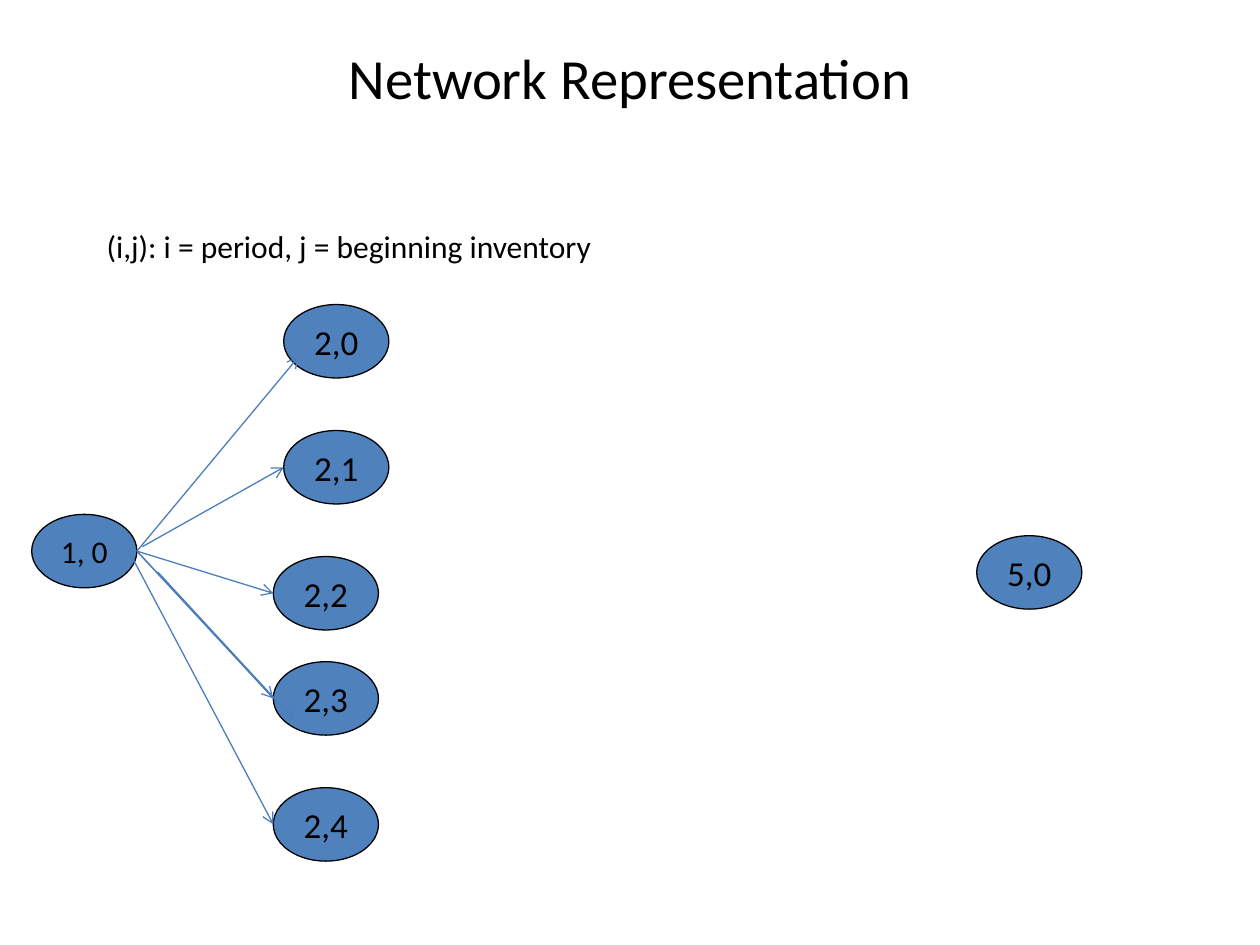
import pptx
import pptx.util
import pptx.dml.color
import pptx.enum.shapes
import pptx.enum.text
import pptx.oxml.ns
import lxml.etree

Cm = pptx.util.Cm
Pt = pptx.util.Pt
RGBColor = pptx.dml.color.RGBColor
qn = pptx.oxml.ns.qn

BLACK = RGBColor(0x00, 0x00, 0x00)
NODE_BLUE = RGBColor(0x4F, 0x81, 0xBD)
ARROW_BLUE = RGBColor(0x4B, 0x7E, 0xBC)
FONT = "Calibri"
NODE_WIDTH, NODE_HEIGHT = 2.12, 1.48

START = ("1, 0", 0, 4.23)
PERIOD_TWO = [
    ("2,0", 5.08, 0),
    ("2,1", 5.08, 2.54),
    ("2,2", 4.87, 5.08),
    ("2,3", 4.87, 7.2),
    ("2,4", 4.87, 9.74),
]
END = ("5,0", 19.05, 4.66)


def write_text(paragraph, text, size):
    paragraph.text = text
    paragraph.font.name = FONT
    paragraph.font.size = Pt(size)
    paragraph.font.color.rgb = BLACK


def add_title(slide, left, top, width, height):
    title = slide.shapes.add_textbox(Cm(left), Cm(top), Cm(width), Cm(height))
    frame = title.text_frame
    frame.word_wrap = True
    frame.vertical_anchor = pptx.enum.text.MSO_ANCHOR.MIDDLE
    write_text(frame.paragraphs[0], "Network Representation", 32.4)
    frame.paragraphs[0].alignment = pptx.enum.text.PP_ALIGN.CENTER


def add_legend(slide, left, top, width, height):
    legend = slide.shapes.add_textbox(Cm(left), Cm(top), Cm(width), Cm(height))
    frame = legend.text_frame
    frame.word_wrap = False
    frame.auto_size = pptx.enum.text.MSO_AUTO_SIZE.SHAPE_TO_FIT_TEXT
    write_text(frame.paragraphs[0], "(i,j): i = period, j = beginning inventory", 18)


def add_node(slide, label, left, top, size=20, space_before=4):
    node = slide.shapes.add_shape(
        pptx.enum.shapes.MSO_SHAPE.OVAL,
        Cm(left), Cm(top), Cm(NODE_WIDTH), Cm(NODE_HEIGHT))
    node.shadow.inherit = False
    node.fill.solid()
    node.fill.fore_color.rgb = NODE_BLUE
    node.line.color.rgb = BLACK
    node.line.width = Pt(0.75)
    frame = node.text_frame
    frame.word_wrap = False
    frame.vertical_anchor = pptx.enum.text.MSO_ANCHOR.MIDDLE
    state = frame.paragraphs[0]
    write_text(state, label, size)
    state.alignment = pptx.enum.text.PP_ALIGN.CENTER
    state.space_before = Pt(space_before)


def add_arrow(slide, x1, y1, x2, y2):
    arrow = slide.shapes.add_connector(
        pptx.enum.shapes.MSO_CONNECTOR.STRAIGHT, Cm(x1), Cm(y1), Cm(x2), Cm(y2))
    arrow.line.color.rgb = ARROW_BLUE
    arrow.line.width = Pt(0.75)
    lxml.etree.SubElement(arrow.line._get_or_add_ln(), qn("a:tailEnd"), type="arrow")
    lxml.etree.SubElement(arrow._element.spPr, qn("a:effectLst"))


def add_network(slide, left, top):
    label, x, y = START
    add_node(slide, label, left + x, top + y, size=18, space_before=0)
    for label, x, y in PERIOD_TWO:
        add_node(slide, label, left + x, top + y)
    label, x, y = END
    add_node(slide, label, left + x, top + y)

    start_edge = (START[1] + NODE_WIDTH, START[2] + NODE_HEIGHT / 2)
    entry = {label: (x, y + NODE_HEIGHT / 2) for label, x, y in PERIOD_TWO}
    inside_three = (5.28, 8.36)
    arrows = [
        (start_edge, (5.38, 1.05)),
        ((2.23, 4.88), entry["2,1"]),
        (start_edge, entry["2,2"]),
        ((1.9, 4.86), entry["2,4"]),
        (start_edge, inside_three),
        (start_edge, entry["2,3"]),
        ((2.54, 5.39), inside_three),
    ]
    for (x1, y1), (x2, y2) in arrows:
        add_arrow(slide, left + x1, top + y1, left + x2, top + y2)


def main():
    presentation = pptx.Presentation()
    presentation.slide_width = Cm(25.4)
    presentation.slide_height = Cm(19.05)
    slide = presentation.slides.add_slide(presentation.slide_layouts[6])
    add_title(slide, 1.27, 0.76, 22.86, 1.58)
    add_network(slide, 0.64, 6.14)
    add_legend(slide, 1.9, 4.45, 10.41, 1.02)
    presentation.save("out.pptx")


if __name__ == "__main__":
    main()
